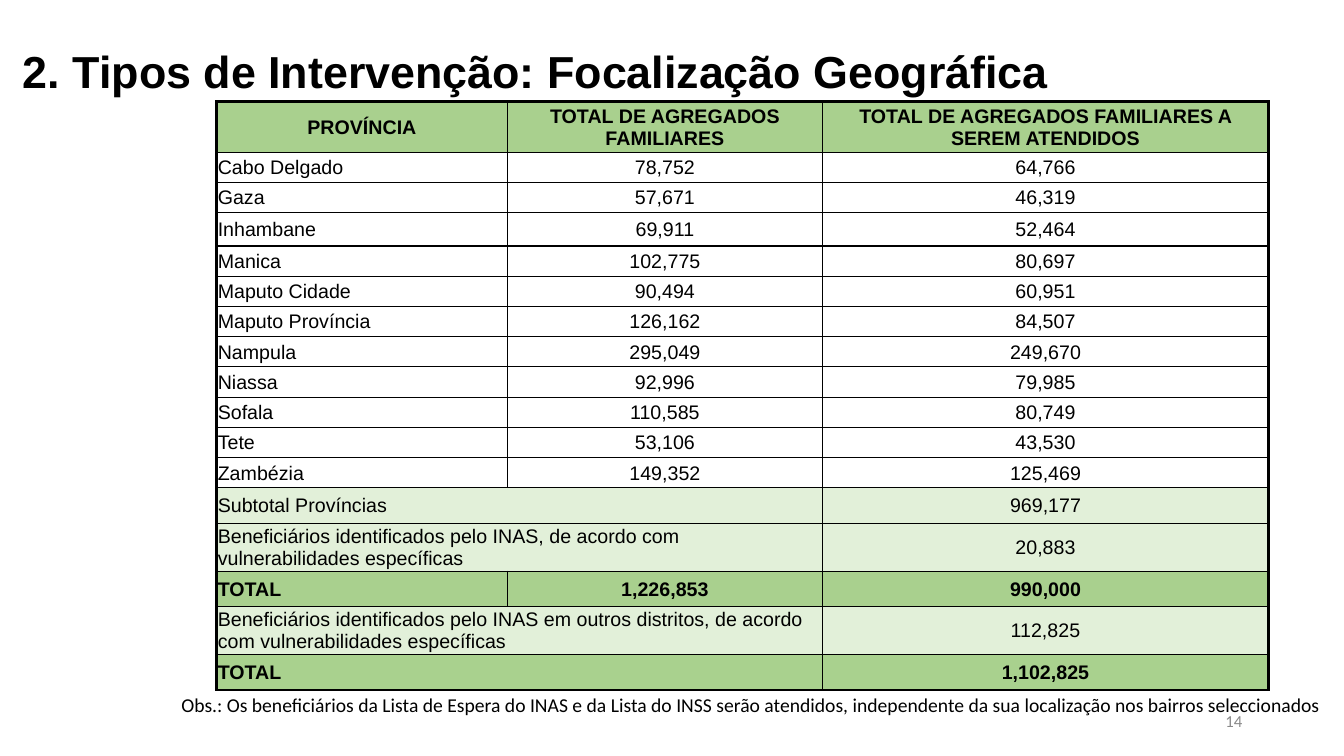
from lxml.etree import SubElement
from pptx import Presentation
from pptx.dml.color import RGBColor
from pptx.enum.text import MSO_ANCHOR, PP_ALIGN
from pptx.oxml.ns import qn
from pptx.util import Inches, Pt

HEADER_GREEN = "A9D08E"
FINAL_GREEN = "A9D18E"
PALE_GREEN = "E2F0D9"
BLACK = "000000"
GRAY = "898989"

HEADINGS = ("PROVÍNCIA", "TOTAL DE AGREGADOS FAMILIARES",
            "TOTAL DE AGREGADOS FAMILIARES A SEREM ATENDIDOS")
PROVINCES = [
    ("Cabo Delgado", "78,752", "64,766"),
    ("Gaza", "57,671", "46,319"),
    ("Inhambane", "69,911", "52,464"),
    ("Manica", "102,775", "80,697"),
    ("Maputo Cidade", "90,494", "60,951"),
    ("Maputo Província", "126,162", "84,507"),
    ("Nampula", "295,049", "249,670"),
    ("Niassa", "92,996", "79,985"),
    ("Sofala", "110,585", "80,749"),
    ("Tete", "53,106", "43,530"),
    ("Zambézia", "149,352", "125,469"),
]
# Label, households, households served, fill, bold; None merges with the label
SUMMARY = [
    ("Subtotal Províncias", None, "969,177", PALE_GREEN, False),
    ("Beneficiários identificados pelo INAS, de acordo com vulnerabilidades "
     "específicas", None, "20,883", PALE_GREEN, False),
    ("TOTAL", "1,226,853", "990,000", HEADER_GREEN, True),
    ("Beneficiários identificados pelo INAS em outros distritos, de acordo com "
     "vulnerabilidades específicas", None, "112,825", PALE_GREEN, False),
    ("TOTAL", None, "1,102,825", FINAL_GREEN, True),
]
COLUMN_WIDTHS = (2.88, 3.13, 4.42)
ROW_HEIGHTS = [0.5] + [0.33 if name == "Inhambane" else 0.3
                       for name, *_ in PROVINCES] + [0.35] * len(SUMMARY)


def rgb(hex_color):
    return RGBColor.from_string(hex_color)


def style_font(paragraph, size, name, color=BLACK, bold=False):
    for run in paragraph.runs:
        run.font.size = Pt(size)
        run.font.name = name
        run.font.bold = bold
        run.font.color.rgb = rgb(color)


def add_text(slide, box, text, size, name, color=BLACK, bold=False,
             align=PP_ALIGN.LEFT, anchor=MSO_ANCHOR.TOP, spacing=1.0):
    frame = slide.shapes.add_textbox(*(Inches(side) for side in box)).text_frame
    frame.word_wrap = True
    frame.vertical_anchor = anchor
    frame.text = text
    paragraph = frame.paragraphs[0]
    paragraph.alignment = align
    paragraph.line_spacing = spacing
    style_font(paragraph, size, name, color, bold)


def set_borders(cell, widths):
    """Draw black borders; widths run left, right, top, bottom."""
    properties = cell._tc.get_or_add_tcPr()
    for index, (side, width) in enumerate(zip(("lnL", "lnR", "lnT", "lnB"), widths)):
        line = properties.makeelement(qn(f"a:{side}"), {"w": str(Pt(width))})
        solid = SubElement(line, qn("a:solidFill"))
        SubElement(solid, qn("a:srgbClr"), val=BLACK)
        properties.insert(index, line)


def style_cell(cell, text, fill, bold, align):
    cell.margin_left = cell.margin_right = cell.margin_top = Inches(0.01)
    cell.margin_bottom = 0
    cell.vertical_anchor = MSO_ANCHOR.MIDDLE
    if fill:
        cell.fill.solid()
        cell.fill.fore_color.rgb = rgb(fill)
    else:
        cell.fill.background()
    if text:
        cell.text = text
        paragraph = cell.text_frame.paragraphs[0]
        paragraph.alignment = align
        style_font(paragraph, 14, "Arial", bold=bold)


def add_province_table(slide, left, top):
    rows = [(*HEADINGS, HEADER_GREEN, True)]
    rows += [(*province, None, False) for province in PROVINCES]
    rows += SUMMARY
    last_row, last_column = len(rows) - 1, len(COLUMN_WIDTHS) - 1
    table = slide.shapes.add_table(
        len(rows), len(COLUMN_WIDTHS), Inches(left), Inches(top),
        Inches(sum(COLUMN_WIDTHS)), Inches(sum(ROW_HEIGHTS))).table
    table.first_row = table.horz_banding = False
    for column, width in zip(table.columns, COLUMN_WIDTHS):
        column.width = Inches(width)
    for row, height in zip(table.rows, ROW_HEIGHTS):
        row.height = Inches(height)

    for r, (*texts, fill, bold) in enumerate(rows):
        inner = 0.5 if fill else 1
        for c, text in enumerate(texts):
            cell = table.cell(r, c)
            centered = r == 0 or c > 0
            style_cell(cell, text, fill, bold,
                       PP_ALIGN.CENTER if centered else PP_ALIGN.LEFT)
            set_borders(cell, (2.25 if c == 0 else inner,
                               2.25 if c == last_column else inner,
                               2.25 if r == 0 else 1,
                               2.25 if r == last_row else 1))
        if texts[1] is None:
            table.cell(r, 0).merge(table.cell(r, 1))


def build_targeting_slide(presentation):
    slide = presentation.slides.add_slide(presentation.slide_layouts[6])
    # Page number
    add_text(slide, (9.42, 6.95, 3, 0.4), "14", 12, "Calibri", GRAY,
             align=PP_ALIGN.RIGHT, anchor=MSO_ANCHOR.MIDDLE)
    # Title
    add_text(slide, (0.13, 0.21, 12.97, 1.05),
             "2. Tipos de Intervenção: Focalização Geográfica", 32, "Arial",
             bold=True, anchor=MSO_ANCHOR.MIDDLE, spacing=0.9)
    # Note under the table
    add_text(slide, (1.7, 6.83, 11.56, 0.34),
             "Obs.: Os beneficiários da Lista de Espera do INAS e da Lista do INSS "
             "serão atendidos, independente da sua localização nos bairros "
             "seleccionados", 14, "Calibri")
    # Households by province
    add_province_table(slide, 2.15, 1.01)


def main():
    presentation = Presentation()
    presentation.slide_width = Inches(13.33)
    presentation.slide_height = Inches(7.5)
    build_targeting_slide(presentation)
    presentation.save("out.pptx")


if __name__ == "__main__":
    main()
